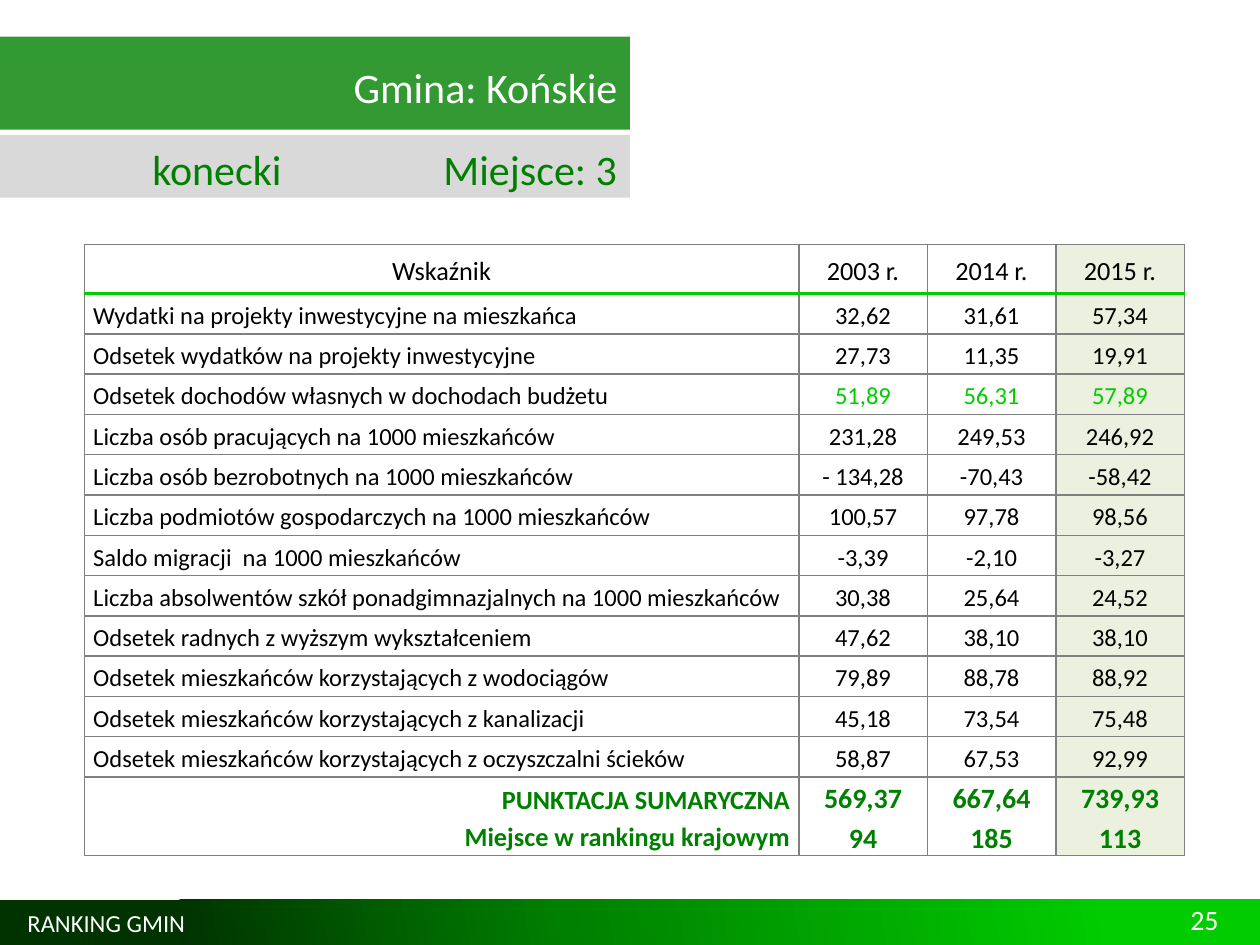
from copy import deepcopy

from pptx import Presentation
from pptx.dml.color import RGBColor
from pptx.enum.shapes import MSO_SHAPE as Shape
from pptx.enum.text import MSO_ANCHOR as Anchor, PP_ALIGN as Align
from pptx.oxml import parse_xml
from pptx.oxml.ns import nsdecls
from pptx.util import Inches, Pt

WHITE = RGBColor(0xFF, 0xFF, 0xFF)
BLACK = RGBColor(0, 0, 0)
DARK_GREEN = RGBColor(0x00, 0x33, 0x00)
GREEN = RGBColor(0x00, 0x80, 0x00)
BRIGHT_GREEN = RGBColor(0x00, 0xCC, 0x00)
TITLE_GREEN = RGBColor(0x33, 0x99, 0x33)
LIGHT_GRAY = RGBColor(0xD9, 0xD9, 0xD9)
BORDER_GRAY = RGBColor(0x80, 0x80, 0x80)
PALE_GREEN = RGBColor(0xEB, 0xF1, 0xDE)

INDICATORS = [
    ("Wskaźnik", "2003 r.", "2014 r.", "2015 r."),
    ("Wydatki na projekty inwestycyjne na mieszkańca", "32,62", "31,61", "57,34"),
    ("Odsetek wydatków na projekty inwestycyjne", "27,73", "11,35", "19,91"),
    ("Odsetek dochodów własnych w dochodach budżetu", "51,89", "56,31", "57,89"),
    ("Liczba osób pracujących na 1000 mieszkańców", "231,28", "249,53", "246,92"),
    ("Liczba osób bezrobotnych na 1000 mieszkańców", "- 134,28", "-70,43", "-58,42"),
    ("Liczba podmiotów gospodarczych na 1000 mieszkańców", "100,57", "97,78", "98,56"),
    ("Saldo migracji  na 1000 mieszkańców", "-3,39", "-2,10", "-3,27"),
    ("Liczba absolwentów szkół ponadgimnazjalnych na 1000 mieszkańców",
     "30,38", "25,64", "24,52"),
    ("Odsetek radnych z wyższym wykształceniem", "47,62", "38,10", "38,10"),
    ("Odsetek mieszkańców korzystających z wodociągów", "79,89", "88,78", "88,92"),
    ("Odsetek mieszkańców korzystających z kanalizacji", "45,18", "73,54", "75,48"),
    ("Odsetek mieszkańców korzystających z oczyszczalni ścieków",
     "58,87", "67,53", "92,99"),
    ("PUNKTACJA SUMARYCZNA\nMiejsce w rankingu krajowym",
     "569,37\n94", "667,64\n185", "739,93\n113"),
]
HIGHLIGHT_ROW = 3
TOTAL_ROW = len(INDICATORS) - 1


def write(frame, text, size, color, align, bold=False):
    frame.text = text
    for paragraph in frame.paragraphs:
        paragraph.alignment = align
        for run in paragraph.runs:
            run.font.name = "Calibri"
            run.font.size = Pt(size)
            run.font.bold = bold
            run.font.color.rgb = color


def add_border(cell, side, color, width):
    """Draw one cell side (L, R, T or B); call before filling the cell."""
    cell._tc.get_or_add_tcPr().append(parse_xml(
        f'<a:ln{side} {nsdecls("a")} w="{Pt(width)}"><a:solidFill>'
        f'<a:srgbClr val="{color}"/></a:solidFill></a:ln{side}>'))


prs = Presentation()
prs.slide_width, prs.slide_height = Inches(10), Inches(7.5)
slide = prs.slides.add_slide(prs.slide_layouts[6])
shapes = slide.shapes

# Footer band
footer = shapes.add_shape(Shape.RECTANGLE, 0, Inches(7.14), Inches(10), Inches(0.36))
footer.shadow.inherit = False
footer.line.fill.background()
footer.fill.gradient()
footer.fill.gradient_angle = 10
last_stop = footer.fill._fill._gradFill.gsLst[-1]
last_stop.addnext(deepcopy(last_stop))
gradient = [(0.14, DARK_GREEN), (0.45, GREEN), (0.88, BRIGHT_GREEN)]
for stop, (position, color) in zip(footer.fill.gradient_stops, gradient):
    stop.position = position
    stop.color.rgb = color

# Indicator table
table_frame = shapes.add_table(len(INDICATORS), 4, Inches(0.67), Inches(1.94),
                               Inches(8.74), Inches(4.86))
table = table_frame.table
table.horz_banding = False
for index, column in enumerate(table.columns):
    column.width = Inches(1.02 if index else 5.67)
for index, row in enumerate(table.rows):
    row.height = Inches({0: 0.39, TOTAL_ROW: 0.61}.get(index, 0.32))

for r, values in enumerate(INDICATORS):
    for c, value in enumerate(values):
        cell = table.cell(r, c)
        size, color, align = 14, BLACK, Align.CENTER
        if r == 0:
            size = 15
        elif r == TOTAL_ROW:
            size, color = (16 if c else 15), GREEN
            align = Align.CENTER if c else Align.RIGHT
        elif c == 0:
            align = Align.LEFT
        elif r == HIGHLIGHT_ROW:
            color = BRIGHT_GREEN
        write(cell.text_frame, value, size, color, align, bold=r == TOTAL_ROW)
        for paragraph in cell.text_frame.paragraphs:
            paragraph.line_spacing = 1.15
        cell.vertical_anchor = Anchor.MIDDLE
        cell.margin_left = cell.margin_right = Inches(0.07)
        cell.margin_top = cell.margin_bottom = 0

        header_rule = {(0, "B"), (1, "T")}
        for side in "LRTB":
            if (r, side) in header_rule:
                add_border(cell, side, BRIGHT_GREEN, 2.25)
            else:
                add_border(cell, side, BORDER_GRAY, 1)
        if c == 3:
            cell.fill.solid()
            cell.fill.fore_color.rgb = PALE_GREEN
        else:
            cell.fill.background()

# Footer texts
for text, left, top, width, height, size, align in [
    ("RANKING GMIN", 0.12, 7.14, 3.17, 0.36, 14, Align.LEFT),
    ("25", 7.44, 7.1, 2.33, 0.4, 16, Align.RIGHT),
]:
    label = shapes.add_textbox(Inches(left), Inches(top), Inches(width), Inches(height))
    label.text_frame.word_wrap = True
    label.text_frame.vertical_anchor = Anchor.MIDDLE
    write(label.text_frame, text, size, WHITE, align)

# Title bands
for text, top, height, fill, color, align, margin_left, margin_top in [
    ("Gmina: Końskie", 0.29, 0.74, TITLE_GREEN, WHITE, Align.RIGHT, 0.1, 0.1),
    ("konecki\tMiejsce: 3", 1.07, 0.5, LIGHT_GRAY, GREEN, Align.LEFT, 1.21, 0.08),
]:
    band = shapes.add_shape(Shape.RECTANGLE, 0, Inches(top), Inches(5), Inches(height))
    band.shadow.inherit = False
    band.fill.solid()
    band.fill.fore_color.rgb = fill
    band.line.fill.background()
    frame = band.text_frame
    frame.word_wrap = True
    frame.vertical_anchor = Anchor.MIDDLE
    frame.margin_left, frame.margin_top = Inches(margin_left), Inches(margin_top)
    write(frame, text, 24, color, align)

# The second band sets the county and the rank apart with a tab stop
frame.margin_right = 0
frame.paragraphs[0]._p.get_or_add_pPr().append(parse_xml(
    f'<a:tabLst {nsdecls("a")}><a:tab pos="{Inches(2.31)}" algn="l"/></a:tabLst>'))

prs.save("out.pptx")
